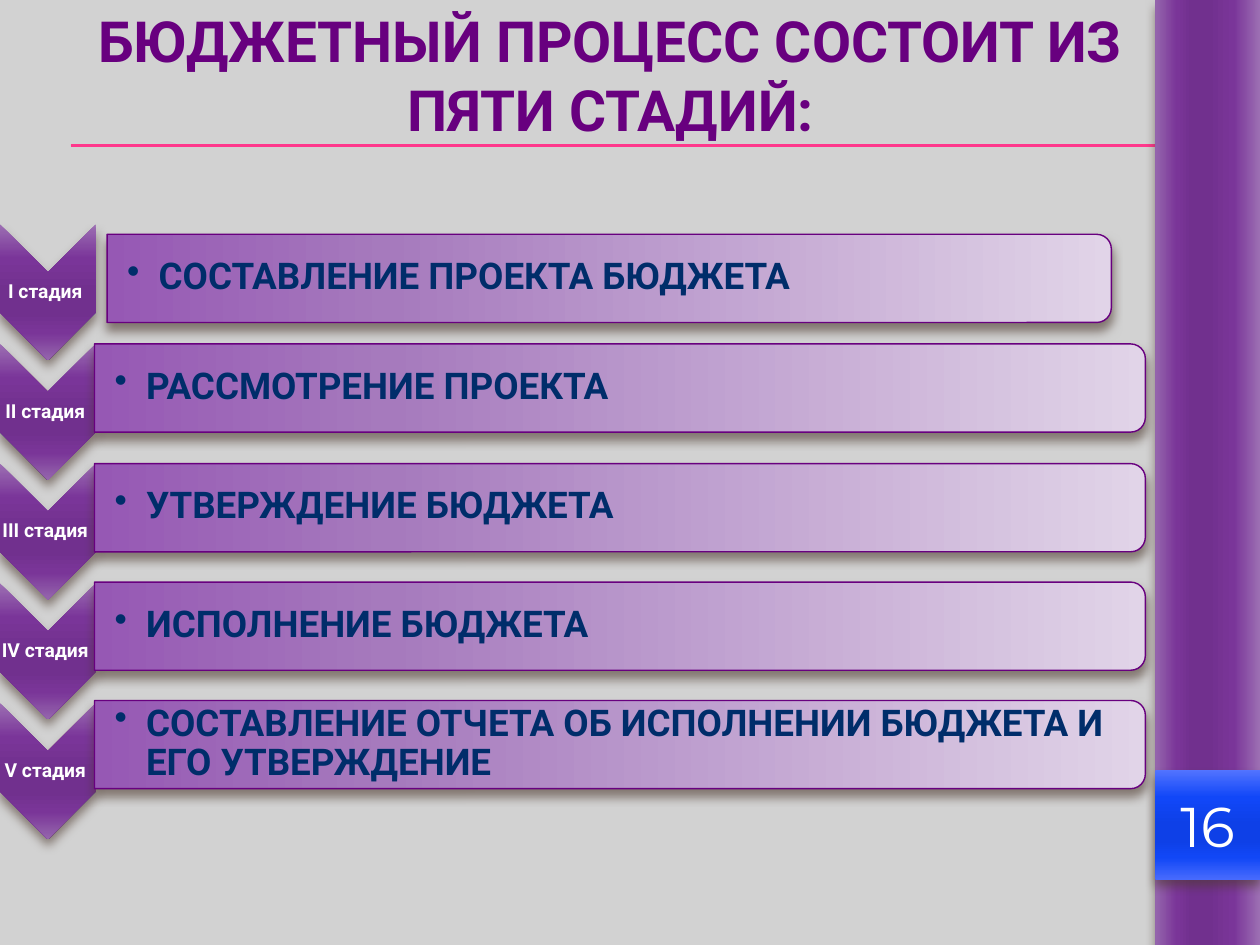
from dataclasses import dataclass

from lxml import etree
from pptx import Presentation
from pptx.dml.color import RGBColor
from pptx.enum.shapes import MSO_CONNECTOR, MSO_SHAPE
from pptx.enum.text import MSO_ANCHOR, MSO_AUTO_SIZE, PP_ALIGN
from pptx.oxml.ns import qn
from pptx.util import Inches, Pt

CHEVRON = MSO_SHAPE.CHEVRON
BAR = MSO_SHAPE.ROUND_2_SAME_RECTANGLE
RECTANGLE = MSO_SHAPE.RECTANGLE
MIDDLE = MSO_ANCHOR.MIDDLE
CENTER = PP_ALIGN.CENTER
LEFT = PP_ALIGN.LEFT


@dataclass(frozen=True)
class Theme:
    font: str = "Roboto"
    number_font: str = "Montserrat"
    background: str = "D2D2D2"
    rule: str = "FF388C"
    title: str = "68007F"
    outline: str = "68007F"
    stage_text: str = "002D6A"
    white: str = "FFFFFF"
    shadow: str = "4E3B30"
    purple: tuple = ((0, "9C6FB3"), (25, "7A3599"), (50, "71308E"),
                     (65, "71308E"), (80, "7A3598"), (100, "9566AD"))
    lilac: tuple = ((0, "E1D4E8"), (72, "A67ABD"), (100, "9658B4"))
    blue: tuple = ((0, "5374FF"), (25, "1147F8"), (50, "0E40E7"),
                   (65, "0E40E7"), (80, "1147F6"), (100, "476AFD"))
    title_size: float = 32.4
    label_size: float = 11
    stage_size: float = 21
    number_size: float = 32


THEME = Theme()

STAGES = [
    ("I стадия", "СОСТАВЛЕНИЕ ПРОЕКТА БЮДЖЕТА"),
    ("II стадия", "РАССМОТРЕНИЕ ПРОЕКТА"),
    ("III стадия", "УТВЕРЖДЕНИЕ БЮДЖЕТА"),
    ("IV стадия", "ИСПОЛНЕНИЕ БЮДЖЕТА"),
    ("V стадия", "СОСТАВЛЕНИЕ ОТЧЕТА ОБ ИСПОЛНЕНИИ БЮДЖЕТА И ЕГО УТВЕРЖДЕНИЕ"),
]
BAR_TOPS = [1.86, 2.73, 3.68, 4.62, 5.56]
STAGE_STEP = 0.95

prs = Presentation()
prs.slide_width = Inches(10)
prs.slide_height = Inches(7.5)
slide = prs.slides.add_slide(prs.slide_layouts[5])
slide.background.fill.solid()
slide.background.fill.fore_color.rgb = RGBColor.from_string(THEME.background)


def add_panel(preset, left, top, width, height, stops, angle=90, turned=False):
    """Add a gradient shape with a shadow; a turned one fills the box after a quarter turn."""
    if turned:
        left, top = left + (width - height) / 2, top + (height - width) / 2
        width, height = height, width
    panel = slide.shapes.add_shape(
        preset, Inches(left), Inches(top), Inches(width), Inches(height))
    panel.rotation = 90 if turned else 0
    panel.line.fill.background()
    panel.fill.gradient()
    gradient = panel.fill._xPr.find(qn("a:gradFill"))
    gradient.find(qn("a:lin")).set("ang", str(angle * 60000))
    stop_list = gradient.find(qn("a:gsLst"))
    for old_stop in list(stop_list):
        stop_list.remove(old_stop)
    for position, color in stops:
        stop = etree.SubElement(stop_list, qn("a:gs"), pos=str(position * 1000))
        etree.SubElement(stop, qn("a:srgbClr"), val=color)
    panel.shadow.inherit = False
    effects = panel.fill._xPr.find(qn("a:effectLst"))
    shadow = etree.SubElement(effects, qn("a:outerShdw"), blurRad=str(Pt(6)),
                              dist=str(Pt(4)), dir="5400000", rotWithShape="0")
    shadow_color = etree.SubElement(shadow, qn("a:srgbClr"), val=THEME.shadow)
    etree.SubElement(shadow_color, qn("a:alpha"), val="60000")
    return panel


def write(holder, text, size, color, align, bold=True, font=THEME.font, bullet=False):
    frame = holder.text_frame
    frame.text = text
    frame.word_wrap = True
    frame.auto_size = MSO_AUTO_SIZE.NONE
    frame.vertical_anchor = MIDDLE
    paragraph = frame.paragraphs[0]
    paragraph.alignment = align
    if bullet:
        properties = paragraph._p.get_or_add_pPr()
        properties.set("marL", str(Inches(0.25)))
        properties.set("indent", str(Inches(-0.25)))
        etree.SubElement(properties, qn("a:buChar"), char="•")
    run_font = paragraph.runs[0].font
    run_font.name = font
    run_font.size = Pt(size)
    run_font.bold = bold
    run_font.color.rgb = RGBColor.from_string(color)
    return frame


# Title with a double rule below it
title = slide.shapes.title
title.left, title.top = Inches(0.67), Inches(0)
title.width, title.height = Inches(8.35), Inches(1.18)
write(title, "БЮДЖЕТНЫЙ ПРОЦЕСС СОСТОИТ ИЗ ПЯТИ СТАДИЙ:",
      THEME.title_size, THEME.title, CENTER)

for rule_y in (1.15, 1.16):
    rule = slide.shapes.add_connector(
        MSO_CONNECTOR.STRAIGHT, Inches(0.56), Inches(rule_y), Inches(10), Inches(rule_y))
    rule.line.color.rgb = RGBColor.from_string(THEME.rule)
    rule.line.width = Pt(0.75)
    etree.SubElement(rule._element.spPr, qn("a:effectLst"))

# Stages: a chevron with its label, and a bar with the stage name
for index, ((label, stage), bar_top) in enumerate(zip(STAGES, BAR_TOPS)):
    chevron_top = 1.78 + index * STAGE_STEP
    add_panel(CHEVRON, 0, chevron_top, 0.76, 1.08, THEME.purple, angle=0, turned=True)
    label_box = slide.shapes.add_textbox(
        Inches(0), Inches(chevron_top + 0.38), Inches(0.76), Inches(0.32))
    label_frame = write(label_box, label, THEME.label_size, THEME.white, CENTER)
    label_frame.margin_left = Inches(0)
    label_frame.margin_right = Inches(0.04)
    label_frame.margin_top = label_frame.margin_bottom = Inches(0.01)
    label_frame.paragraphs[0].line_spacing = 0.9

    bar_left, bar_width = (0.85, 7.97) if index == 0 else (0.75, 8.34)
    bar = add_panel(BAR, bar_left, bar_top, bar_width, 0.7, THEME.lilac, turned=True)
    bar.line.color.rgb = RGBColor.from_string(THEME.outline)
    bar.line.width = Pt(0.79)
    stage_box = slide.shapes.add_textbox(
        Inches(bar_left), Inches(bar_top + 0.03), Inches(bar_width - 0.04), Inches(0.63))
    stage_frame = write(stage_box, stage, THEME.stage_size, THEME.stage_text, LEFT, bullet=True)
    stage_frame.margin_left = Inches(0.16)
    stage_frame.margin_right = Inches(0.01)
    stage_frame.margin_top = stage_frame.margin_bottom = Inches(0.01)
    stage_frame.paragraphs[0].line_spacing = 0.9

# Side band and slide number
add_panel(RECTANGLE, 9.17, 0, 0.83, 7.5, THEME.purple, turned=True)
number_tile = add_panel(RECTANGLE, 9.17, 6.11, 0.83, 0.87, THEME.blue)
write(number_tile, "16", THEME.number_size, THEME.white, CENTER,
      bold=False, font=THEME.number_font)

prs.save("out.pptx")
